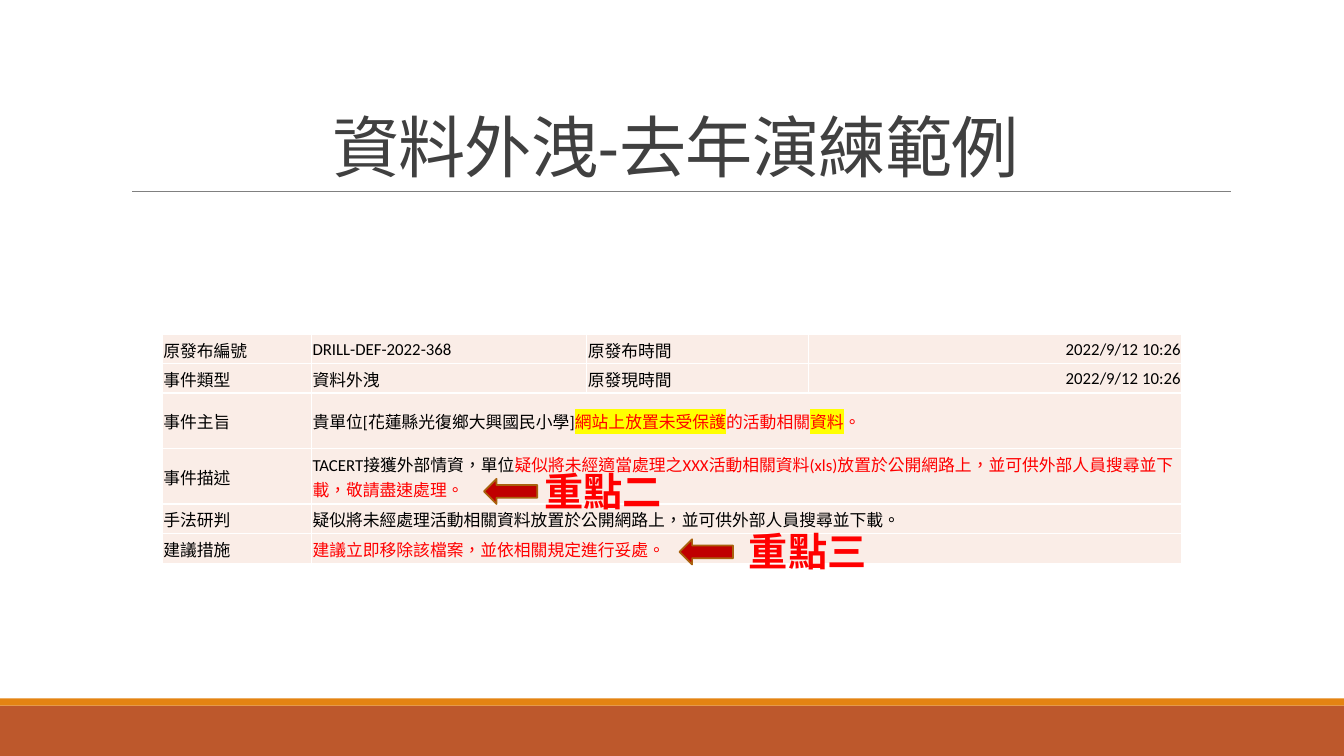
from pptx import Presentation
from pptx.dml.color import RGBColor
from pptx.enum.shapes import MSO_CONNECTOR, MSO_SHAPE
from pptx.enum.text import MSO_ANCHOR as ANCHOR, PP_ALIGN as ALIGN
from pptx.oxml.ns import qn
from pptx.util import Inches, Pt
from lxml.etree import SubElement

FONT = "Calibri"
COLORS = {
    "rust": "BD582C", "orange": "E48312", "rule": "808080", "title": "404040",
    "text": "000000", "key": "FF0000", "mark": "FFFF00", "cell": "FAEDE7",
    "border": "FFFFFF", "arrow": "C00000", "arrow_line": "A9610D",
}

# Table content: a cell is a list of runs (text, color, highlighted)
COL_WIDTHS = [1.48, 2.73, 2.2, 3.7]
ROW_HEIGHTS = [0.29, 0.29, 0.55, 0.55, 0.29, 0.3]
SHORT_ROWS = [
    ["原發布編號", "DRILL-DEF-2022-368", "原發布時間", "2022/9/12 10:26"],
    ["事件類型", "資料外洩", "原發現時間", "2022/9/12 10:26"],
]
WIDE_ROWS = [
    ("事件主旨", [("貴單位[花蓮縣光復鄉大興國民小學]", "text", False),
              ("網站上放置未受保護", "key", True),
              ("的活動相關", "key", False),
              ("資料", "key", True),
              ("。", "key", False)]),
    ("事件描述", [("TACERT接獲外部情資，單位", "text", False),
              ("疑似將未經適當處理之XXX活動相關資料(xls)放置於公開網路上，"
               "並可供外部人員搜尋並下載，敬請盡速處理。", "key", False)]),
    ("手法研判", [("疑似將未經處理活動相關資料放置於公開網路上，"
               "並可供外部人員搜尋並下載。", "text", False)]),
    ("建議措施", [("建議立即移除該檔案，並依相關規定進行妥處。", "key", False)]),
]


def rgb(name):
    return RGBColor.from_string(COLORS[name])


def add_run(p, text, size, color, bold=False, marked=False):
    r = p.add_run()
    r.text = text
    r.font.size = Pt(size)
    r.font.bold = bold
    r.font.color.rgb = rgb(color)
    r.font.name = FONT
    r_pr = r._r.get_or_add_rPr()
    r_pr.set("lang", "zh-TW")
    if marked:
        highlight = SubElement(r_pr, qn("a:highlight"))
        SubElement(highlight, qn("a:srgbClr")).set("val", COLORS["mark"])
        r_pr.find(qn("a:solidFill")).addnext(highlight)
    return r


def add_block(s, kind, left, top, width, height, fill, line=None):
    sp = s.shapes.add_shape(kind, Inches(left), Inches(top),
                            Inches(width), Inches(height))
    sp.shadow.inherit = False
    sp.fill.solid()
    sp.fill.fore_color.rgb = rgb(fill)
    if line:
        sp.line.color.rgb = rgb(line)
        sp.line.width = Pt(1.25)
    else:
        sp.line.fill.background()


def add_rule(s, left, right, top):
    line = s.shapes.add_connector(MSO_CONNECTOR.STRAIGHT, Inches(left),
                                  Inches(top), Inches(right), Inches(top))
    line.line.color.rgb = rgb("rule")
    line.line.width = Pt(0.5)
    SubElement(line._element.spPr, qn("a:effectLst"))


def add_text(s, left, top, width, height, text, size, color,
             bold=False, anchor=ANCHOR.TOP):
    sp = s.shapes.add_textbox(Inches(left), Inches(top),
                              Inches(width), Inches(height))
    tf = sp.text_frame
    tf.word_wrap = True
    tf.vertical_anchor = anchor
    p = tf.paragraphs[0]
    p.alignment = ALIGN.CENTER
    return p, add_run(p, text, size, color, bold)


def fill_cell(cell, runs, align=ALIGN.LEFT):
    cell.vertical_anchor = ANCHOR.MIDDLE
    cell.margin_left = cell.margin_right = cell.margin_top = Inches(0.01)
    cell.margin_bottom = 0
    p = cell.text_frame.paragraphs[0]
    p.alignment = align
    for text, color, marked in runs:
        add_run(p, text, 12, color, marked=marked)


def style_cell(cell):
    # Borders come before the fill in the cell properties
    tc_pr = cell._tc.get_or_add_tcPr()
    for side in ("a:lnL", "a:lnR", "a:lnT", "a:lnB"):
        ln = SubElement(tc_pr, qn(side), w=str(Pt(1)))
        solid = SubElement(ln, qn("a:solidFill"))
        SubElement(solid, qn("a:srgbClr")).set("val", COLORS["border"])
    cell.fill.solid()
    cell.fill.fore_color.rgb = rgb("cell")


def add_incident_table(s, left, top):
    table = s.shapes.add_table(
        len(ROW_HEIGHTS), len(COL_WIDTHS), Inches(left), Inches(top),
        Inches(sum(COL_WIDTHS)), Inches(sum(ROW_HEIGHTS))).table
    table.first_row = table.horz_banding = False
    for col, width in zip(table.columns, COL_WIDTHS):
        col.width = Inches(width)
    for row, height in zip(table.rows, ROW_HEIGHTS):
        row.height = Inches(height)
    for cell in table.iter_cells():
        style_cell(cell)

    last = len(COL_WIDTHS) - 1
    for i, texts in enumerate(SHORT_ROWS):
        for j, text in enumerate(texts):
            fill_cell(table.cell(i, j), [(text, "text", False)],
                      ALIGN.RIGHT if j == last else ALIGN.LEFT)
    for i, (label, runs) in enumerate(WIDE_ROWS, len(SHORT_ROWS)):
        table.cell(i, 1).merge(table.cell(i, last))
        fill_cell(table.cell(i, 0), [(label, "text", False)])
        fill_cell(table.cell(i, 1), runs)


def add_callout(s, text, text_left, text_top, arrow_left, arrow_top):
    add_block(s, MSO_SHAPE.LEFT_ARROW, arrow_left, arrow_top, 0.53, 0.25,
              "arrow", "arrow_line")
    add_text(s, text_left, text_top, 1.82, 0.57, text, 28, "key", bold=True)


def main():
    prs = Presentation()
    prs.slide_width, prs.slide_height = Inches(13.33), Inches(7.5)
    s = prs.slides.add_slide(prs.slide_layouts[6])

    # Footer bands and title rule
    add_block(s, MSO_SHAPE.RECTANGLE, 0, 7, 13.33, 0.5, "rust")
    add_block(s, MSO_SHAPE.RECTANGLE, 0, 6.93, 13.33, 0.07, "orange")
    add_rule(s, 1.31, 12.21, 1.9)

    # Title
    p, r = add_text(s, 1.2, 0.31, 11, 1.59, "資料外洩-去年演練範例", 48, "title",
                    anchor=ANCHOR.BOTTOM)
    p.line_spacing = 0.85
    r._r.get_or_add_rPr().set("spc", "-50")

    # Incident report and its key points
    add_incident_table(s, 1.61, 3.32)
    add_callout(s, "重點二", 5.07, 4.59, 4.8, 4.75)
    add_callout(s, "重點三", 7.1, 5.18, 6.74, 5.35)

    prs.save("out.pptx")


if __name__ == "__main__":
    main()
